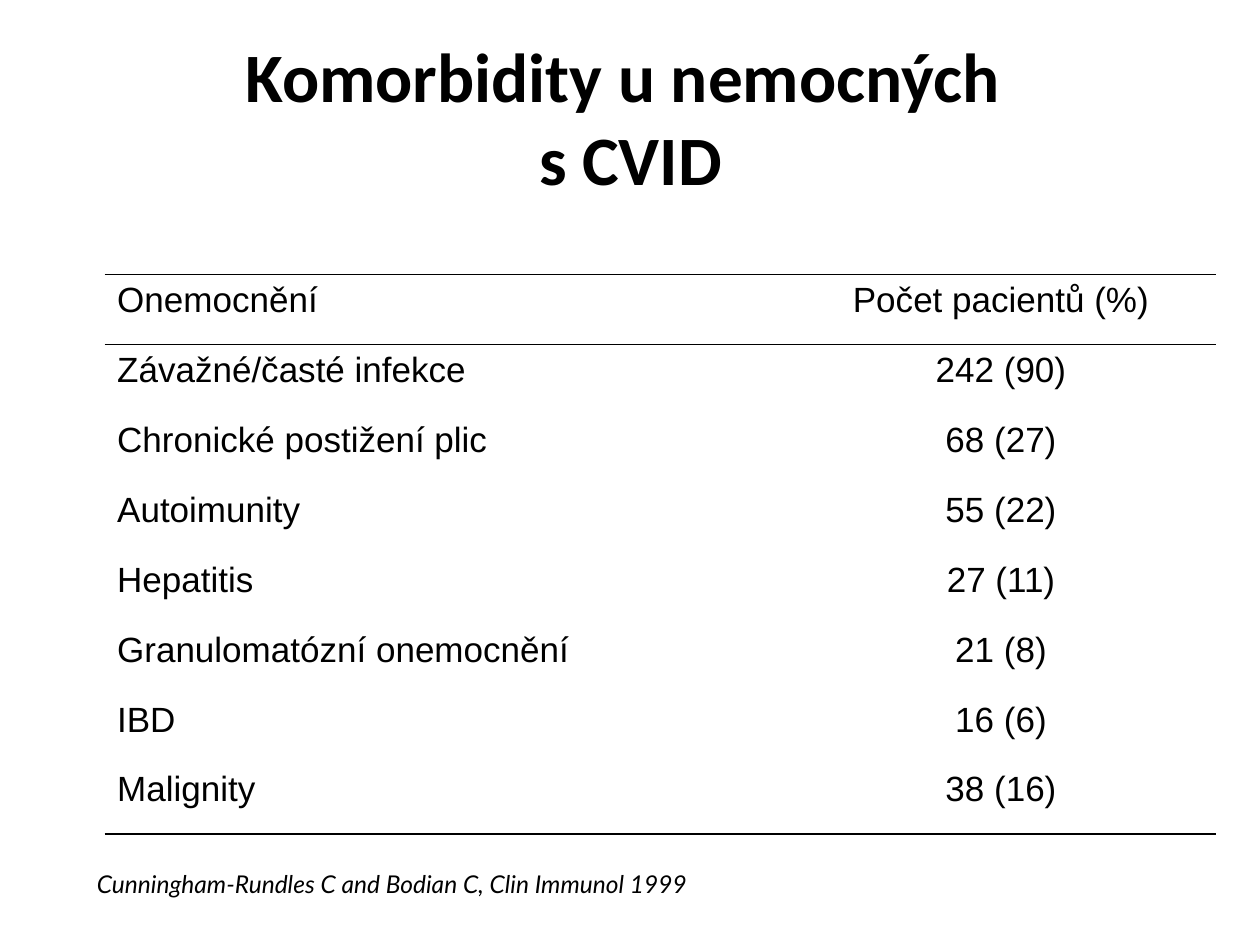
"""Build a slide with a table of comorbidities in patients with CVID."""
from lxml.etree import SubElement
from pptx import Presentation
from pptx.dml.color import RGBColor
from pptx.enum.text import MSO_ANCHOR, PP_ALIGN
from pptx.oxml.ns import qn
from pptx.util import Inches, Pt

BLACK = RGBColor(0, 0, 0)
WIDTH, HEIGHT = Inches(10), Inches(7.5)

TITLE = "Komorbidity u nemocných \vs CVID"
SOURCE = "Cunningham-Rundles C and Bodian C, Clin Immunol 1999"
ROWS = [
    ("Onemocnění", "Počet pacientů (%)"),
    ("Závažné/časté infekce", "242 (90)"),
    ("Chronické postižení plic", "68 (27)"),
    ("Autoimunity", "55 (22)"),
    ("Hepatitis", "27 (11)"),
    ("Granulomatózní onemocnění", "21 (8)"),
    ("IBD", "16 (6)"),
    ("Malignity", "38 (16)"),
]
COLUMN_SHARES = (0.541, 0.341)
COLUMN_ALIGNMENTS = (PP_ALIGN.LEFT, PP_ALIGN.CENTER)
RULED_EDGES = {0, 1, len(ROWS)}

TITLE_FONT = {"name": "Calibri", "size": Pt(39.6), "bold": True}
CELL_FONT = {"name": "Arial", "size": Pt(20)}
SOURCE_FONT = {"name": "Lato", "size": Pt(14), "italic": True}


def write(text_frame, text, font, alignment):
    """Fill a text frame with one formatted paragraph."""
    text_frame.text = text
    paragraph = text_frame.paragraphs[0]
    paragraph.alignment = alignment
    for run in paragraph.runs:
        run.font.color.rgb = BLACK
        for attribute, value in font.items():
            setattr(run.font, attribute, value)


def add_text(slide, box, text, font, alignment, wrap):
    """Add a text box placed by inches."""
    text_frame = slide.shapes.add_textbox(*map(Inches, box)).text_frame
    text_frame.word_wrap = wrap
    text_frame.vertical_anchor = MSO_ANCHOR.MIDDLE
    write(text_frame, text, font, alignment)


def set_borders(cell, row):
    """Rule the cell edges that lie on a ruled table edge and clear the rest."""
    properties = cell._tc.get_or_add_tcPr()
    ruled = {"lnT": row in RULED_EDGES, "lnB": row + 1 in RULED_EDGES}
    for tag in ("lnL", "lnR", "lnT", "lnB"):
        line = SubElement(properties, qn(f"a:{tag}"), w=str(Pt(1)))
        if ruled.get(tag):
            fill = SubElement(line, qn("a:solidFill"))
            SubElement(fill, qn("a:srgbClr"), val=str(BLACK))
        else:
            SubElement(line, qn("a:noFill"))


def add_comorbidity_table(slide):
    """Add the table with equal rows and three horizontal rules."""
    widths = [int(WIDTH * share) for share in COLUMN_SHARES]
    table = slide.shapes.add_table(
        len(ROWS), len(widths), Inches(0.83), Inches(2.18), sum(widths), Inches(4.44)
    ).table
    table.first_row = table.horz_banding = False
    for column, width in zip(table.columns, widths):
        column.width = width
    for row, values in enumerate(ROWS):
        for column, text in enumerate(values):
            cell = table.cell(row, column)
            write(cell.text_frame, text, CELL_FONT, COLUMN_ALIGNMENTS[column])
            set_borders(cell, row)
            cell.fill.background()


def main():
    """Assemble and save the slide."""
    presentation = Presentation()
    presentation.slide_width, presentation.slide_height = WIDTH, HEIGHT
    slide = presentation.slides.add_slide(presentation.slide_layouts[6])
    add_text(slide, (0.2, 0.3, 9.61, 1.25), TITLE, TITLE_FONT, PP_ALIGN.CENTER, True)
    add_comorbidity_table(slide)
    add_text(slide, (0.67, 6.84, 5.19, 0.34), SOURCE, SOURCE_FONT, PP_ALIGN.LEFT, False)
    presentation.save("out.pptx")


if __name__ == "__main__":
    main()
